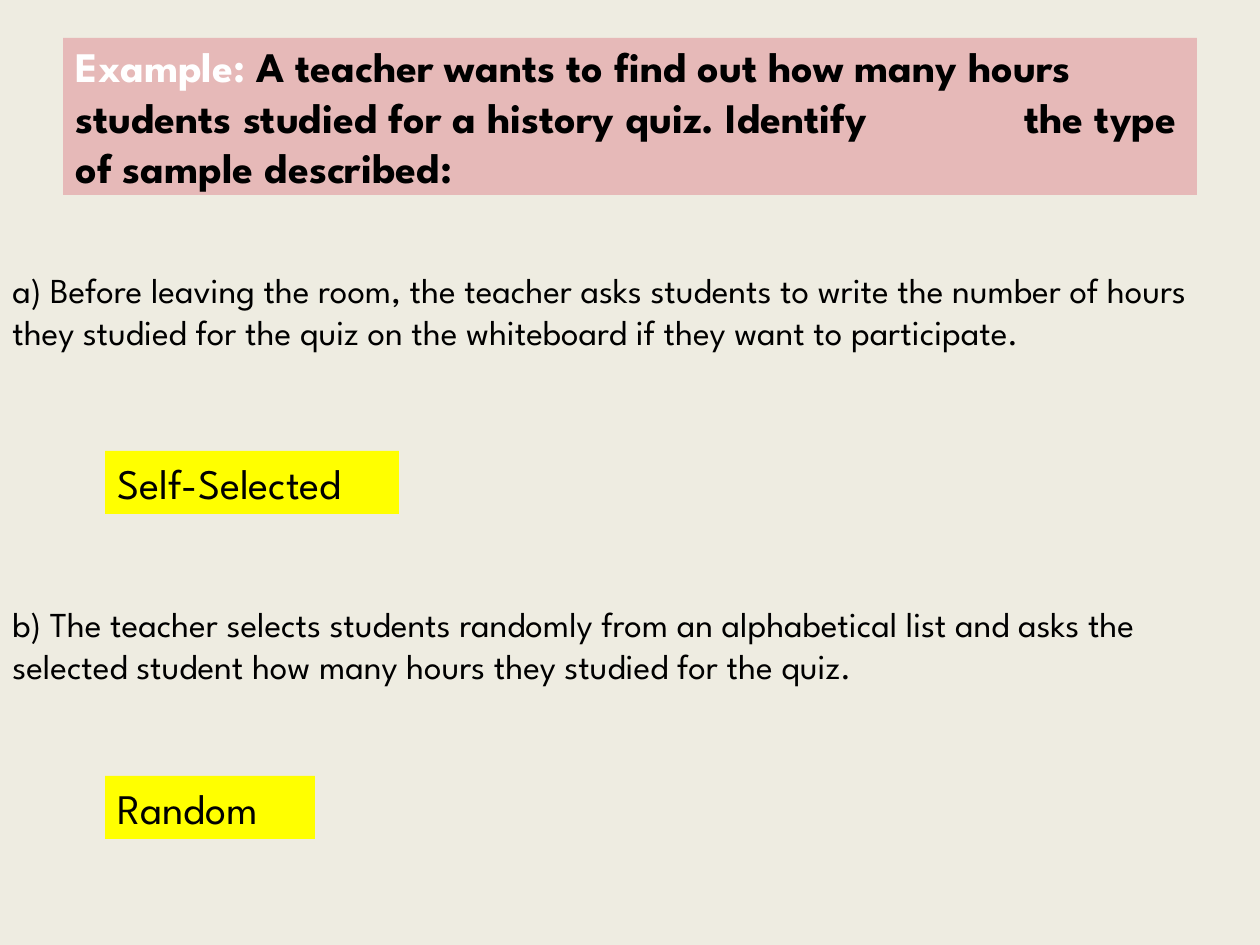
from lxml.etree import SubElement
from pptx import Presentation
from pptx.dml.color import RGBColor
from pptx.enum.shapes import MSO_SHAPE
from pptx.enum.text import MSO_ANCHOR, PP_ALIGN
from pptx.oxml.ns import qn
from pptx.util import Pt

PX = 914400 // 126
FONT = "League Spartan"
COLORS = {
    "background": "EEECE1",
    "banner": "E6B9B8",
    "answer": "FFFF00",
    "text": "000000",
    "label": "FFFFFF",
}


def color(name):
    return RGBColor.from_string(COLORS[name])


def format_text(shape, size, bold=False):
    shape.text_frame.word_wrap = True
    paragraph = shape.text_frame.paragraphs[0]
    paragraph.alignment = PP_ALIGN.LEFT
    paragraph.font.name = FONT
    paragraph.font.size = Pt(size)
    paragraph.font.bold = bold
    paragraph.font.color.rgb = color("text")
    return paragraph


deck = Presentation()
deck.slide_width, deck.slide_height = 1260 * PX, 945 * PX
page = deck.slides.add_slide(deck.slide_layouts[5])
page.background.fill.solid()
page.background.fill.fore_color.rgb = color("background")

title = page.shapes.title
title.left, title.top, title.width, title.height = 63 * PX, 38 * PX, 1134 * PX, 157 * PX
title.fill.solid()
title.fill.fore_color.rgb = color("banner")
title.text_frame.vertical_anchor = MSO_ANCHOR.MIDDLE
paragraph = format_text(title, 24, bold=True)
label = paragraph.add_run()
label.text = "Example: "
label.font.color.rgb = color("label")
span = paragraph.add_run()
span.text = (
    "A teacher wants to find out how many hours students studied "
    "for a history quiz. Identify\tthe type of sample described:"
)
properties = paragraph.font._element.getparent()
tabs = SubElement(properties, qn("a:tabLst"))
SubElement(tabs, qn("a:tab"), pos=str(949 * PX), algn="l")
properties.insert(0, tabs)

questions = [
    (262, 140, "a) Before leaving the room, the teacher asks students to write the number of "
               "hours they studied for the quiz on the whiteboard if they want to participate."),
    (596, 97, "b) The teacher selects students randomly from an alphabetical list and asks the "
              "selected student how many hours they studied for the quiz."),
]
for top, height, question in questions:
    box = page.shapes.add_textbox(0, top * PX, 1260 * PX, height * PX)
    box.text_frame.text = question
    format_text(box, 20)

for top, width, answer in [(451, 294, "Self-Selected"), (776, 210, "Random")]:
    box = page.shapes.add_shape(MSO_SHAPE.RECTANGLE, 105 * PX, top * PX, width * PX, 63 * PX)
    box.shadow.inherit = False
    box.fill.solid()
    box.fill.fore_color.rgb = color("answer")
    box.line.fill.background()
    box.text_frame.vertical_anchor = MSO_ANCHOR.TOP
    box.text_frame.text = answer
    format_text(box, 24)

deck.save("out.pptx")
